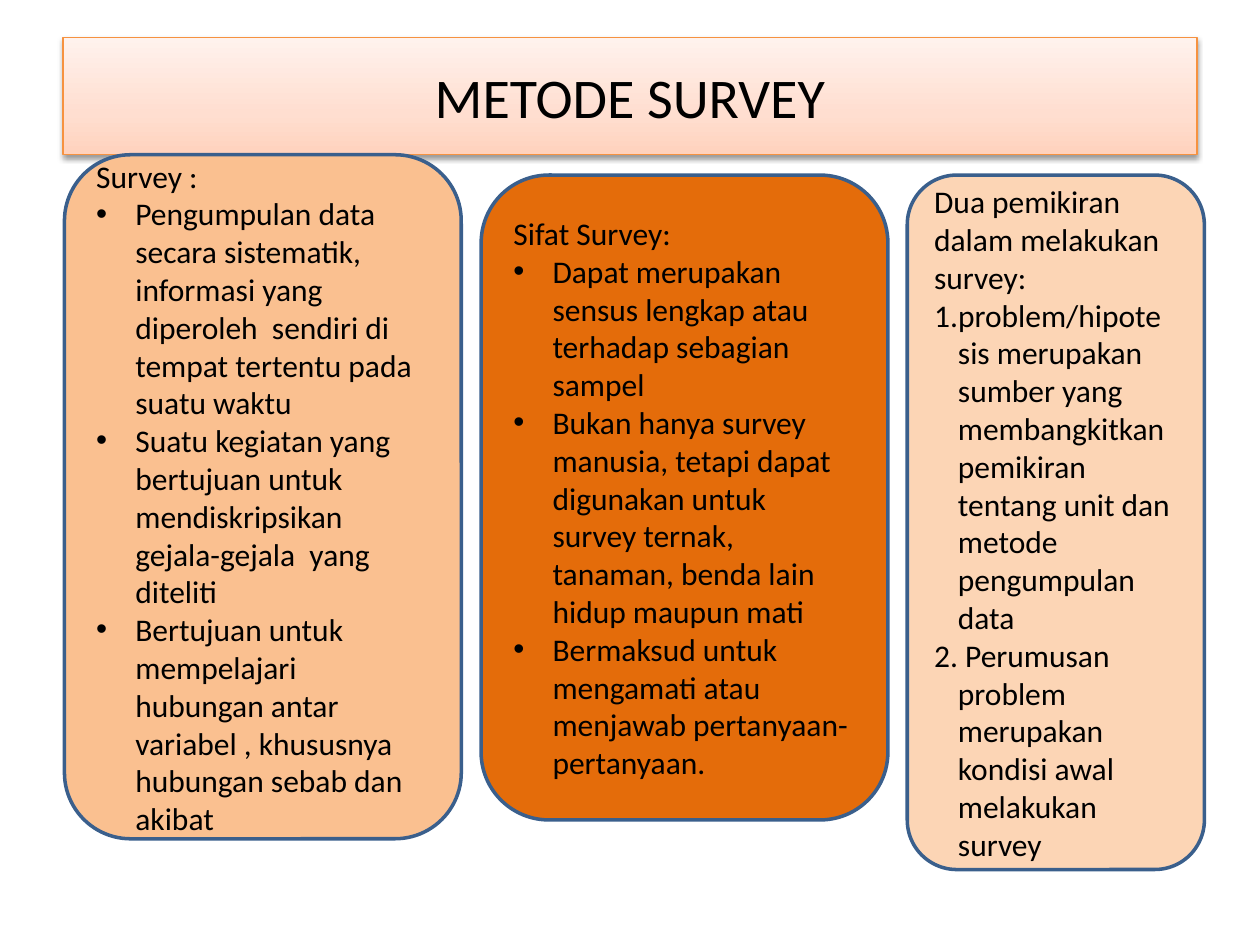
from dataclasses import dataclass
from lxml.etree import SubElement
from pptx import Presentation
from pptx.dml.color import RGBColor
from pptx.enum.shapes import MSO_SHAPE
from pptx.enum.text import MSO_ANCHOR, PP_ALIGN
from pptx.oxml.ns import qn
from pptx.shapes.autoshape import Shape
from pptx.slide import Slide
from pptx.util import Cm, Pt


@dataclass(frozen=True)
class Theme:
    font: str = "Calibri"
    head: int = 32
    body: int = 18
    ink: str = "000000"
    edge: str = "3A5F8C"
    rim: str = "F69240"
    fade: tuple = ((0, "FFD2BD"), (35, "FFDED0"), (100, "FFF2ED"))


@dataclass(frozen=True)
class Card:
    box: tuple
    fill: str
    lead: str
    items: tuple
    indent: float
    bullet: bool = True


LOOK = Theme()
CARDS = (
    Card((1.3, 3.12, 8, 13.79), "FAC090", "Survey :", (
        "Pengumpulan data secara sistematik, informasi yang diperoleh  sendiri di tempat tertentu pada suatu waktu",
        "Suatu kegiatan yang bertujuan untuk mendiskripsikan gejala-gejala  yang diteliti",
        "Bertujuan untuk mempelajari  hubungan antar variabel , khususnya hubungan sebab dan akibat",
    ), 0.79),
    Card((9.7, 3.53, 8.2, 13), "E46C0A", "Sifat Survey:", (
        "Dapat merupakan sensus lengkap atau terhadap sebagian sampel",
        "Bukan hanya survey manusia, tetapi dapat digunakan untuk survey ternak, tanaman, benda lain hidup maupun mati",
        "Bermaksud untuk mengamati atau menjawab pertanyaan-pertanyaan.",
    ), 0.79),
    Card((18.29, 3.53, 5.99, 14), "FCD5B5", "Dua pemikiran dalam melakukan survey:", (
        "1.problem/hipote sis merupakan sumber yang membangkitkan pemikiran tentang unit dan metode pengumpulan data",
        "2. Perumusan problem merupakan kondisi awal melakukan survey",
    ), 0.48, False),
)


def add_box(slide: Slide, kind: MSO_SHAPE, box: tuple, edge: str, width: float) -> Shape:
    shape = slide.shapes.add_shape(kind, *map(Cm, box))
    shape.shadow.inherit = False
    shape.line.color.rgb = RGBColor.from_string(edge)
    shape.line.width = Pt(width)
    shape.text_frame.word_wrap = True
    shape.text_frame.vertical_anchor = MSO_ANCHOR.MIDDLE
    return shape


def set_text(shape: Shape, lines: tuple, size: int, align: PP_ALIGN) -> None:
    frame = shape.text_frame
    frame.text = "\n".join(lines)
    for para in frame.paragraphs:
        para.alignment = align
        para.font.name = LOOK.font
        para.font.size = Pt(size)
        para.font.color.rgb = RGBColor.from_string(LOOK.ink)


def add_title(slide: Slide, text: str) -> None:
    shape = add_box(slide, MSO_SHAPE.RECTANGLE, (1.27, 0.76, 22.86, 2.36), LOOK.rim, 0.75)
    set_text(shape, (text,), LOOK.head, PP_ALIGN.CENTER)
    shape.fill.gradient()
    shape.fill.gradient_angle = 90
    props = shape._element.spPr
    stops = props.find(".//" + qn("a:gsLst"))
    for stop in list(stops):
        stops.remove(stop)
    for pos, color in LOOK.fade:
        stop = SubElement(stops, qn("a:gs"), pos=str(pos * 1000))
        SubElement(stop, qn("a:srgbClr"), val=color)
    shade = SubElement(props.find(qn("a:effectLst")), qn("a:outerShdw"),
                       blurRad=str(Pt(3.1)), dist=str(Pt(1.6)), dir="5400000", rotWithShape="0")
    color = SubElement(shade, qn("a:srgbClr"), val=LOOK.ink)
    SubElement(color, qn("a:alpha"), val="38000")


def add_card(slide: Slide, card: Card) -> None:
    shape = add_box(slide, MSO_SHAPE.ROUNDED_RECTANGLE, card.box, LOOK.edge, 2)
    shape.fill.solid()
    shape.fill.fore_color.rgb = RGBColor.from_string(card.fill)
    set_text(shape, (card.lead, *card.items), LOOK.body, PP_ALIGN.LEFT)
    for para in shape.text_frame.paragraphs[1:]:
        props = para._p.get_or_add_pPr()
        props.set("marL", str(Cm(card.indent)))
        props.set("indent", str(-Cm(card.indent)))
        if card.bullet:
            mark = props.makeelement(qn("a:buFont"), {"typeface": "Arial"})
            props.insert(0, mark)
            mark.addnext(props.makeelement(qn("a:buChar"), {"char": "•"}))


def main() -> None:
    """Build the survey method slide and save it."""
    deck = Presentation()
    deck.slide_width, deck.slide_height = Cm(25.4), Cm(19.05)
    slide = deck.slides.add_slide(deck.slide_layouts[6])
    add_title(slide, "METODE SURVEY")
    for card in CARDS:
        add_card(slide, card)
    deck.save("out.pptx")


if __name__ == "__main__":
    main()
